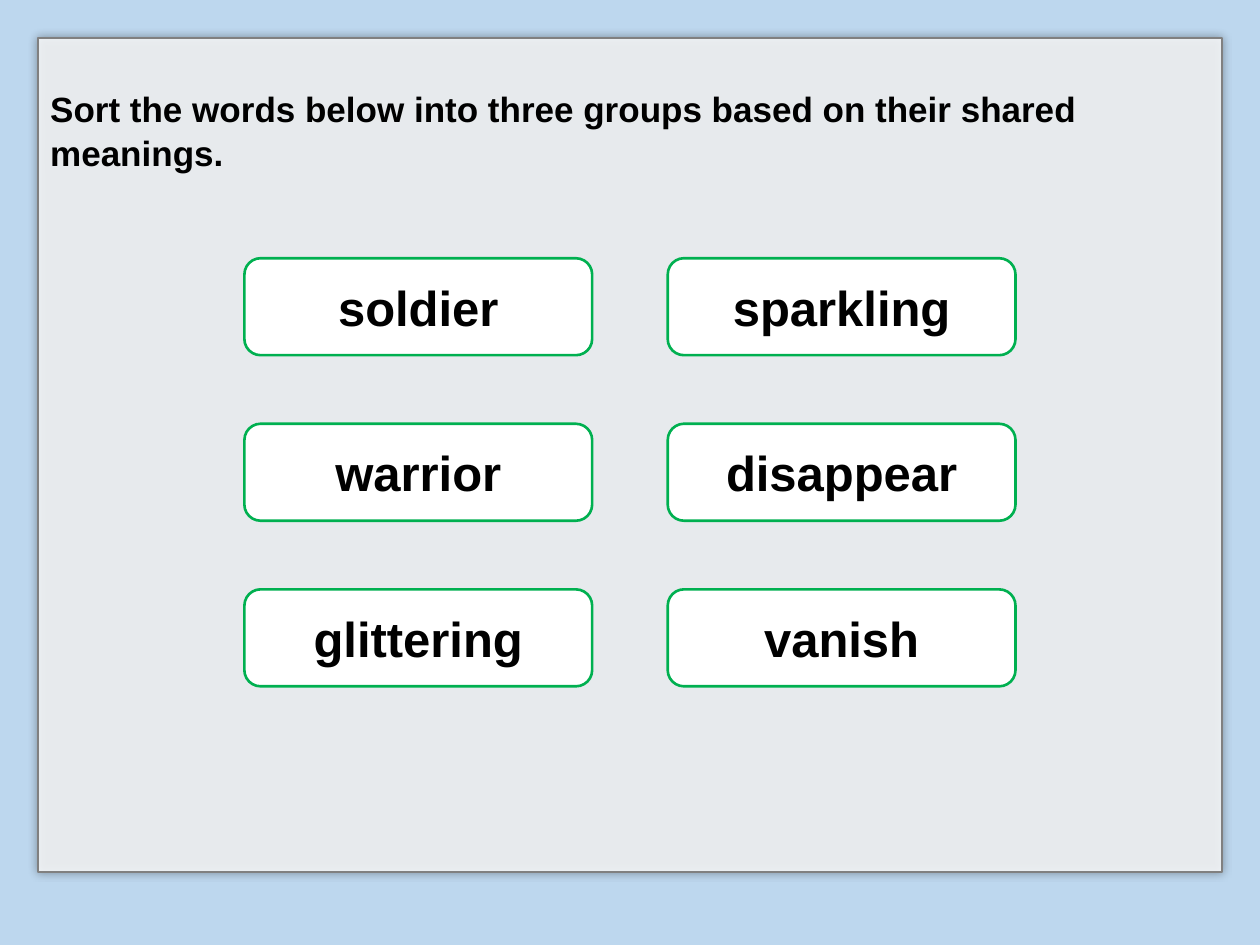
from dataclasses import dataclass

from lxml import etree
from pptx import Presentation
from pptx.dml.color import RGBColor
from pptx.enum.shapes import MSO_SHAPE
from pptx.enum.text import MSO_ANCHOR, PP_ALIGN
from pptx.oxml.ns import qn
from pptx.util import Pt

RECTANGLE = MSO_SHAPE.RECTANGLE
ROUNDED = MSO_SHAPE.ROUNDED_RECTANGLE
TOP, MIDDLE = MSO_ANCHOR.TOP, MSO_ANCHOR.MIDDLE
LEFT, CENTER = PP_ALIGN.LEFT, PP_ALIGN.CENTER

INSTRUCTION = "Sort the words below into three groups based on their shared meanings."
WORD_ROWS = [
    ("soldier", "sparkling"),
    ("warrior", "disappear"),
    ("glittering", "vanish"),
]


@dataclass(frozen=True)
class Theme:
    background: str = "BDD7EE"
    surface: str = "FFFFFF"
    panel_line: str = "808080"
    card_line: str = "00B050"
    ink: str = "000000"
    font: str = "Arial"
    instruction_size: int = 20
    word_size: int = 28


class WordSortPage:
    def __init__(self, deck, theme):
        self.theme = theme
        self.page = deck.slides.add_slide(deck.slide_layouts[6])
        fill = self.page.background.fill
        fill.solid()
        fill.fore_color.rgb = RGBColor.from_string(theme.background)

    def box(self, kind, bounds, line_color, line_width):
        box = self.page.shapes.add_shape(kind, *map(Pt, bounds))
        box.shadow.inherit = False
        box.fill.solid()
        box.fill.fore_color.rgb = RGBColor.from_string(self.theme.surface)
        box.line.color.rgb = RGBColor.from_string(line_color)
        box.line.width = Pt(line_width)
        return box

    def label(self, box, text, size, frame_format, para_format):
        frame = box.text_frame
        para = frame.paragraphs[0]
        span = para.add_run()
        span.text = text
        span.font.color.rgb = RGBColor.from_string(self.theme.ink)
        font_format = {"name": self.theme.font, "size": Pt(size), "bold": True}
        for target, values in (
            (frame, {"word_wrap": True, **frame_format}),
            (para, para_format),
            (span.font, font_format),
        ):
            for name, value in values.items():
                setattr(target, name, value)

    def soften(self, box, opacity, shadow_opacity, blur):
        properties = box._element.spPr
        color = properties.find(qn("a:solidFill")).find(qn("a:srgbClr"))
        etree.SubElement(color, qn("a:alpha"), val=str(opacity * 1000))
        shadow = etree.SubElement(
            properties.find(qn("a:effectLst")), qn("a:outerShdw"),
            blurRad=str(Pt(blur)), dist="0", dir="0", algn="ctr", rotWithShape="0",
        )
        shade = etree.SubElement(shadow, qn("a:srgbClr"), val=self.theme.ink)
        etree.SubElement(shade, qn("a:alpha"), val=str(shadow_opacity * 1000))

    def panel(self, text, bounds):
        panel = self.box(RECTANGLE, bounds, self.theme.panel_line, 1)
        self.soften(panel, opacity=82, shadow_opacity=40, blur=5)
        self.label(
            panel, text, self.theme.instruction_size,
            {"vertical_anchor": TOP, "margin_top": Pt(27.5)},
            {"alignment": LEFT, "line_spacing": 1.04},
        )

    def card(self, word, bounds):
        card = self.box(ROUNDED, bounds, self.theme.card_line, 1.5)
        margins = {f"margin_{side}": 0 for side in ("left", "top", "right", "bottom")}
        self.label(
            card, word, self.theme.word_size,
            {"vertical_anchor": MIDDLE, **margins}, {"alignment": CENTER},
        )


def main():
    """Build the word sorting slide."""
    deck = Presentation()
    deck.slide_width, deck.slide_height = Pt(720), Pt(540)
    page = WordSortPage(deck, Theme())
    page.panel(INSTRUCTION, (21.6, 21.6, 676.8, 476.6))

    left, top, width, height = 139.7, 147.6, 198.7, 55.4
    column_step, row_step = 241.9, 94.6
    for row, words in enumerate(WORD_ROWS):
        for column, word in enumerate(words):
            x, y = left + column * column_step, top + row * row_step
            page.card(word, (x, y, width, height))

    deck.save("out.pptx")


if __name__ == "__main__":
    main()
